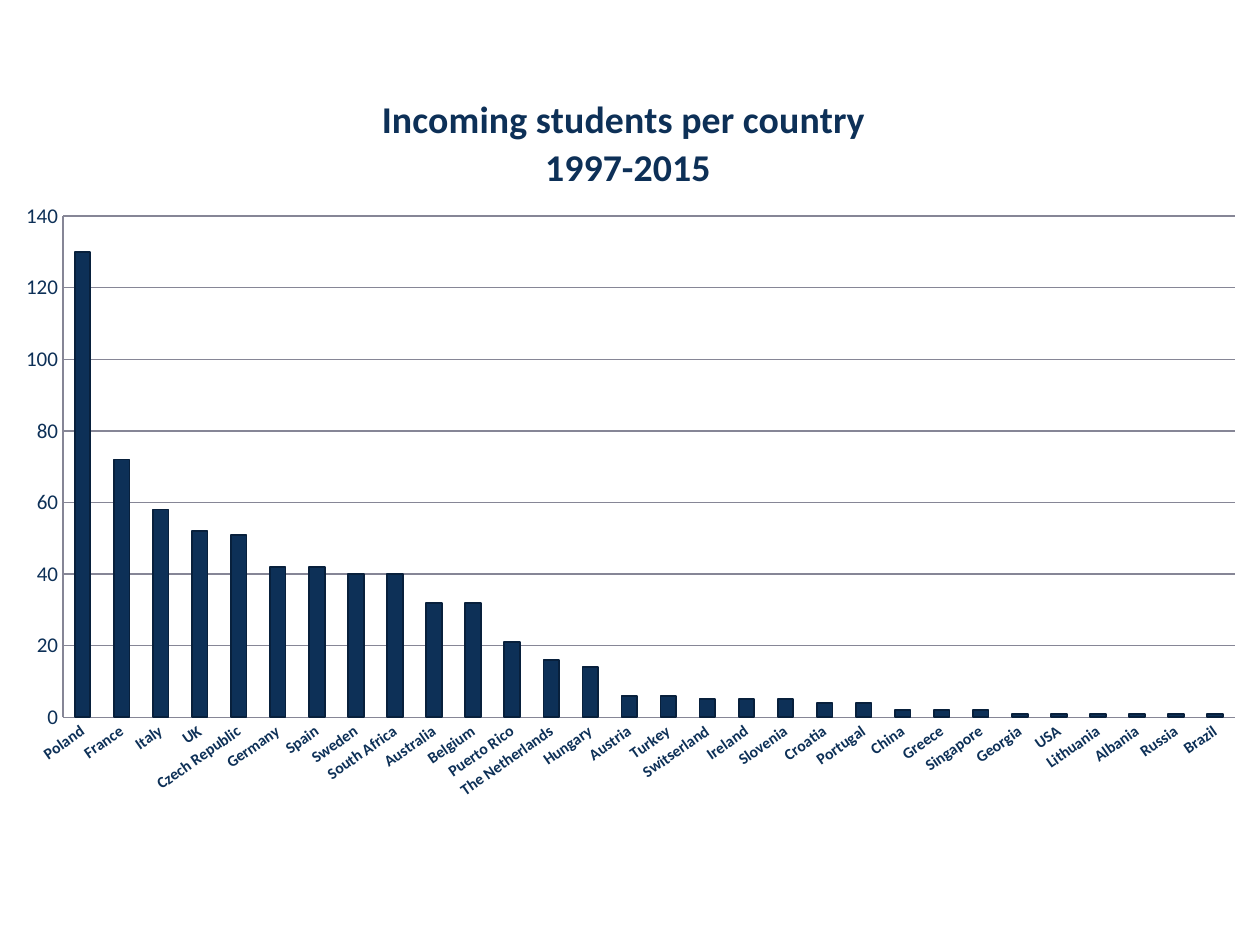
from lxml.etree import SubElement
from pptx import Presentation
from pptx.chart.data import CategoryChartData
from pptx.dml.color import RGBColor
from pptx.enum.chart import XL_CHART_TYPE, XL_TICK_MARK
from pptx.oxml.ns import qn
from pptx.util import Inches, Pt

NAVY, EDGE, GRID = "0D3057", "08203C", "868696"
TITLE_LINES = ["Incoming students per country ", "1997-2015"]
STUDENTS = {
    "Poland": 130, "France": 72, "Italy": 58, "UK": 52, "Czech Republic": 51,
    "Germany": 42, "Spain": 42, "Sweden": 40, "South Africa": 40,
    "Australia": 32, "Belgium": 32, "Puerto Rico": 21, "The Netherlands": 16,
    "Hungary": 14, "Austria": 6, "Turkey": 6, "Switserland": 5, "Ireland": 5,
    "Slovenia": 5, "Croatia": 4, "Portugal": 4, "China": 2, "Greece": 2,
    "Singapore": 2, "Georgia": 1, "USA": 1, "Lithuania": 1, "Albania": 1,
    "Russia": 1, "Brazil": 1,
}


def color(value):
    return RGBColor.from_string(value)


def format_font(font, **values):
    font.color.rgb = color(NAVY)
    for name, value in {"name": "Calibri", **values}.items():
        setattr(font, name, value)


def format_line(line, value, width=0.75):
    line.color.rgb = color(value)
    line.width = Pt(width)


def place(element, index, **values):
    """Give a chart part a manual layout, as fractions of the chart."""
    for old in element.findall(qn("c:layout")):
        element.remove(old)
    layout = SubElement(element, qn("c:layout"))
    manual = SubElement(layout, qn("c:manualLayout"))
    for name, value in values.items():
        SubElement(manual, qn(f"c:{name}")).set("val", str(value))
    element.insert(index, layout)


def add_student_chart(page):
    data = CategoryChartData(number_format="General")
    data.categories = list(STUDENTS)
    data.add_series("Series 1", list(STUDENTS.values()))
    chart = page.shapes.add_chart(
        XL_CHART_TYPE.COLUMN_CLUSTERED,
        Inches(0), Inches(0.48), Inches(10), Inches(6), data).chart
    chart.has_legend = False
    format_font(chart.font, size=Pt(18))
    place(chart.plots[0]._element.getparent(), 0, layoutTarget="inner",
          xMode="edge", yMode="edge", x=0.05, y=0.206, w=0.93, h=0.663)
    return chart


def format_title(chart):
    title = chart.chart_title
    frame = title.text_frame
    frame.text = "\n".join(TITLE_LINES)
    for para in frame.paragraphs:
        for font in (para.font, para.runs[0].font):
            format_font(font, size=Pt(21.6), bold=True)
    place(title._element, 1, xMode="edge", yMode="edge", x=0.3, y=0.04)


def format_bars(chart):
    plot = chart.plots[0]
    plot.gap_width = 150
    plot.vary_by_categories = False
    bars = plot.series[0].format
    bars.fill.solid()
    bars.fill.fore_color.rgb = color(NAVY)
    format_line(bars.line, EDGE, 1)


def format_axis(axis, **font):
    axis.major_tick_mark = axis.minor_tick_mark = XL_TICK_MARK.NONE
    format_line(axis.format.line, GRID)
    format_font(axis.tick_labels.font, **font)


def format_axes(chart):
    countries, counts = chart.category_axis, chart.value_axis
    format_axis(countries, size=Pt(9), bold=True)
    format_axis(counts, size=Pt(12), bold=False)
    countries._element.find(qn("c:txPr")).find(qn("a:bodyPr")).set("rot", "-2100000")
    counts.minimum_scale, counts.maximum_scale, counts.major_unit = 0, 140, 20
    counts.has_major_gridlines = True
    format_line(counts.major_gridlines.format.line, GRID)


def main():
    deck = Presentation()
    deck.slide_width, deck.slide_height = Inches(10), Inches(7.5)
    page = deck.slides.add_slide(deck.slide_layouts[6])
    chart = add_student_chart(page)
    format_title(chart)
    format_bars(chart)
    format_axes(chart)
    deck.save("out.pptx")


if __name__ == "__main__":
    main()
